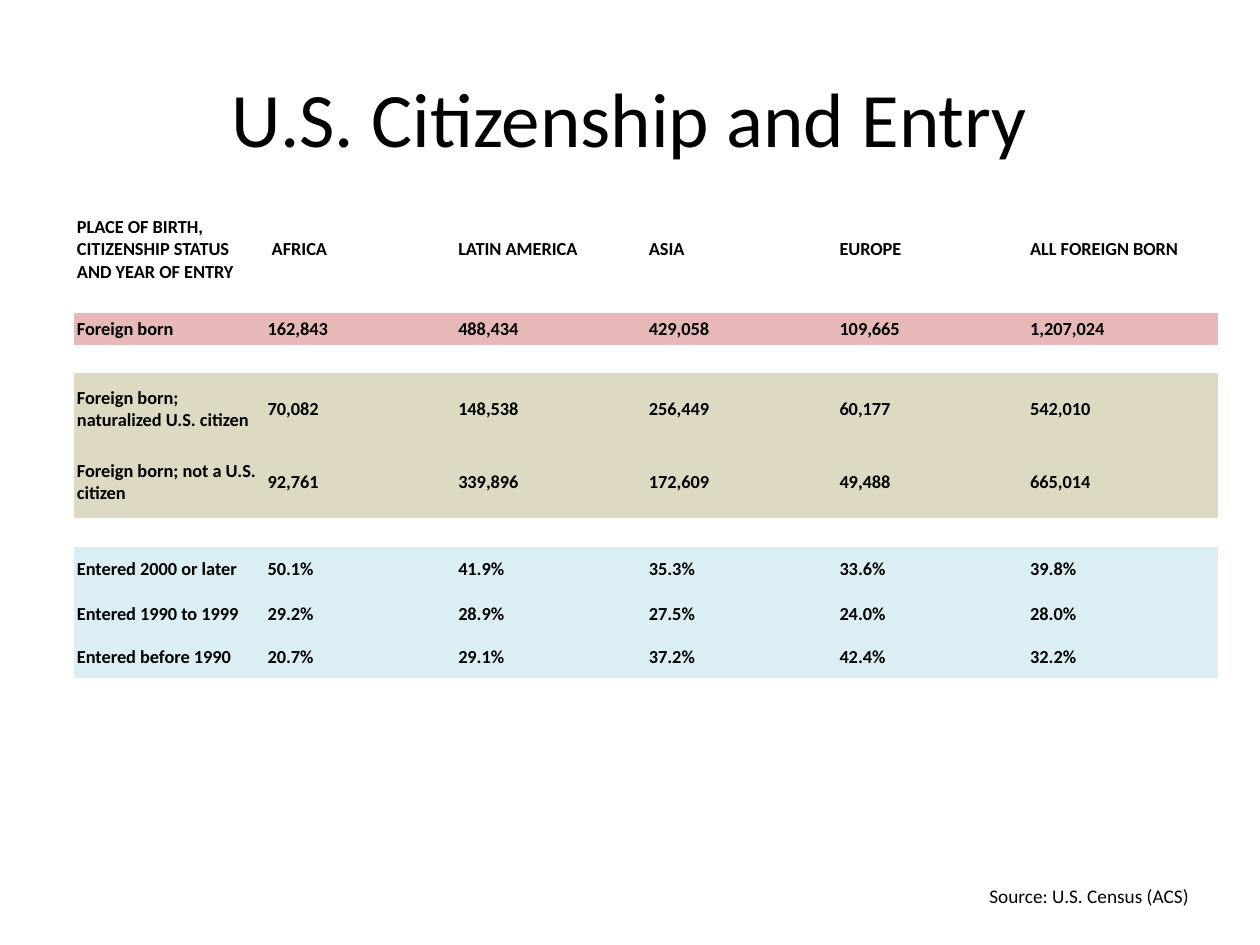
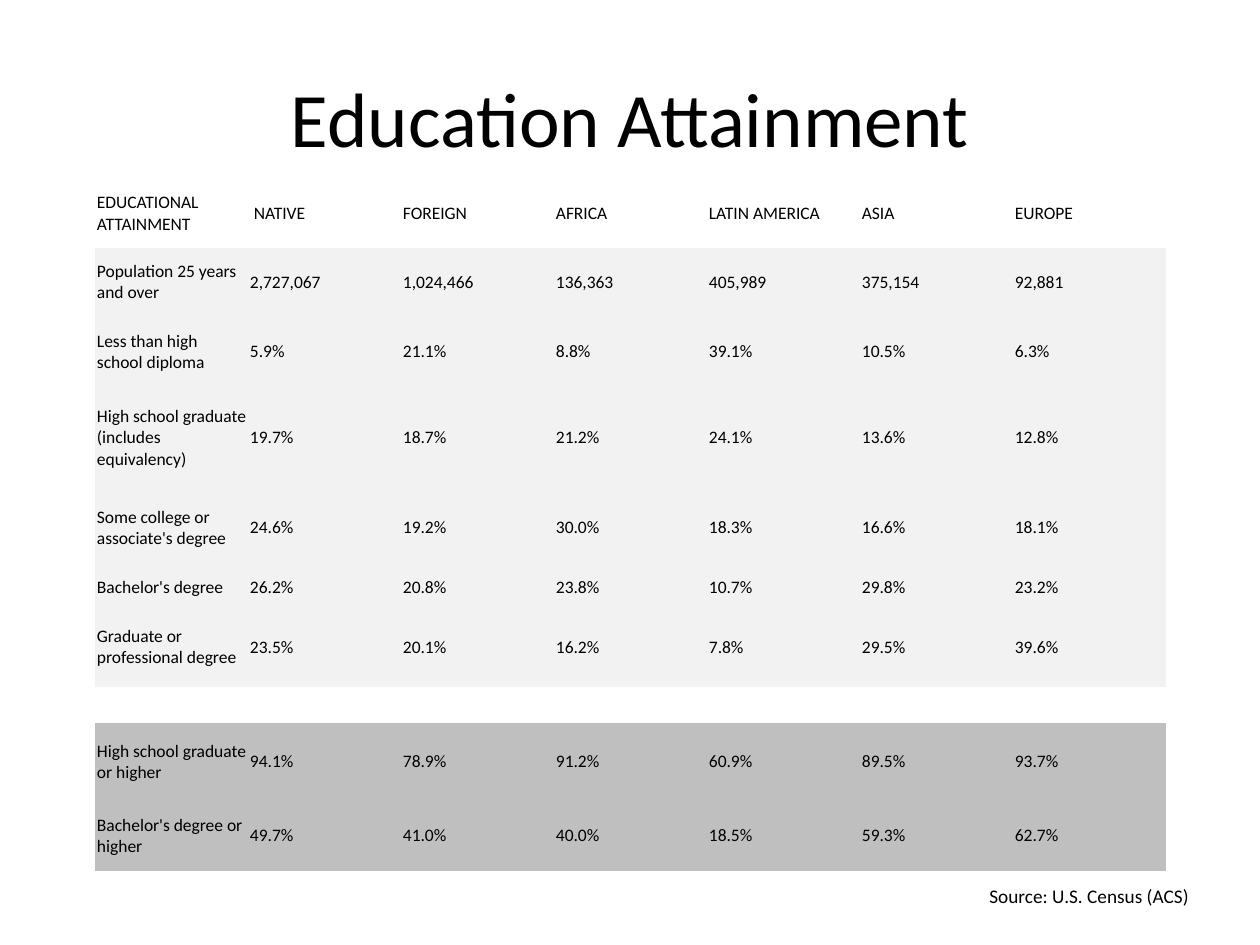
"""Build two census table slides: citizenship and entry, and education attainment."""
from pptx import Presentation, util as u
from pptx.dml.color import RGBColor
from pptx.enum import text
from pptx.oxml.ns import qn

PX = 914400 / 126
FONT, INK = "Calibri", "000000"
PINK, SAND, SKY, PALE, GREY = "E6B9B8", "DDD9C3", "DBEEF4", "F2F2F2", "BFBFBF"
NO_STYLE_NO_GRID = "{2D5ABB26-0587-4C30-8999-92F81FD0307C}"
SOURCE = "Source: U.S. Census (ACS)"
TITLE_BOX = (63, 38, 1134, 157)
SOURCE_BOX = (977, 878, 262, 37)

# Each row: height, band colour, cells; a row without cells is a gap.
SLIDES = [
    {
        "title": "U.S. Citizenship and Entry",
        "box": (74, 186, 1144), "inset": 3, "size": 10.5, "bold": True,
        "rows": [
            (127, None, ["PLACE OF BIRTH, CITIZENSHIP STATUS AND YEAR OF ENTRY", " AFRICA",
                         "LATIN AMERICA", "ASIA", "EUROPE", "ALL FOREIGN BORN"]),
            (32, PINK, ["Foreign born", "162,843", "488,434", "429,058", "109,665", "1,207,024"]),
            (28, None, []),
            (73, SAND, ["Foreign born; naturalized U.S. citizen", "70,082", "148,538",
                        "256,449", "60,177", "542,010"]),
            (72, SAND, ["Foreign born; not a U.S. citizen", "92,761", "339,896",
                        "172,609", "49,488", "665,014"]),
            (29, None, []),
            (45, SKY, ["Entered 2000 or later", "50.1%", "41.9%", "35.3%", "33.6%", "39.8%"]),
            (45, SKY, ["Entered 1990 to 1999", "29.2%", "28.9%", "27.5%", "24.0%", "28.0%"]),
            (41, SKY, ["Entered before 1990", "20.7%", "29.1%", "37.2%", "42.4%", "32.2%"]),
        ],
    },
    {
        "title": "Education Attainment",
        "box": (95, 179, 1071), "inset": 2, "size": 10, "bold": False,
        "rows": [
            (69, None, ["EDUCATIONAL ATTAINMENT", " NATIVE", "FOREIGN", "AFRICA ",
                        "LATIN AMERICA", "ASIA", "EUROPE"]),
            (69, PALE, ["Population 25 years and over", "2,727,067", "1,024,466", "136,363",
                        "405,989", "375,154", "92,881"]),
            (70, PALE, ["Less than high school diploma", "5.9%", "21.1%", "8.8%",
                        "39.1%", "10.5%", "6.3%"]),
            (102, PALE, ["High school graduate (includes equivalency)", "19.7%", "18.7%",
                         "21.2%", "24.1%", "13.6%", "12.8%"]),
            (78, PALE, ["Some college or associate's degree", "24.6%", "19.2%", "30.0%",
                        "18.3%", "16.6%", "18.1%"]),
            (41, PALE, ["Bachelor's degree", "26.2%", "20.8%", "23.8%", "10.7%", "29.8%", "23.2%"]),
            (79, PALE, ["Graduate or professional degree", "23.5%", "20.1%", "16.2%",
                        "7.8%", "29.5%", "39.6%"]),
            (36, None, []),
            (78, GREY, ["High school graduate or higher", "94.1%", "78.9%", "91.2%",
                        "60.9%", "89.5%", "93.7%"]),
            (70, GREY, ["Bachelor's degree or higher", "49.7%", "41.0%", "40.0%",
                        "18.5%", "59.3%", "62.7%"]),
        ],
    },
]


def px(length):
    return u.Emu(round(length * PX))


def colour(code):
    return RGBColor.from_string(code)


def write(paragraph, words, size, bold=False):
    run = paragraph.add_run()
    run.text = words
    for key, value in {"name": FONT, "size": u.Pt(size), "bold": bold}.items():
        setattr(run.font, key, value)
    run.font.color.rgb = colour(INK)


def add_label(slide, box, words, size, **frame_format):
    frame = slide.shapes.add_textbox(*map(px, box)).text_frame
    for key, value in {"word_wrap": True, **frame_format}.items():
        setattr(frame, key, value)
    write(frame.paragraphs[0], words, size)
    return frame.paragraphs[0]


def fill_cell(cell, words, band, content):
    side, edge = px(content["inset"]), px(1)
    cell_format = {"margin_left": side, "margin_right": side, "margin_top": edge,
                   "margin_bottom": edge, "vertical_anchor": text.MSO_ANCHOR.MIDDLE}
    for key, value in cell_format.items():
        setattr(cell, key, value)
    if band:
        cell.fill.solid()
        cell.fill.fore_color.rgb = colour(band)
    else:
        cell.fill.background()
    paragraph = cell.text_frame.paragraphs[0]
    if words:
        write(paragraph, words, content["size"], content["bold"])
    else:
        paragraph._p.get_or_add_endParaRPr().set("sz", "1000")


def add_census_table(slide, content):
    left, top, width = content["box"]
    rows = content["rows"]
    columns = len(rows[0][2])
    height = sum(row[0] for row in rows)
    frame = slide.shapes.add_table(len(rows), columns, *map(px, (left, top, width, height)))
    table = frame.table
    table.first_row = table.horz_banding = False
    next(table._tbl.iter(qn("a:tableStyleId"))).text = NO_STYLE_NO_GRID
    for column in table.columns:
        column.width = px(width / columns)
    for row, (row_height, band, cells) in zip(table.rows, rows):
        row.height = px(row_height)
        for cell, words in zip(row.cells, cells or [""] * columns):
            fill_cell(cell, words, band, content)


def main():
    deck = Presentation()
    deck.slide_width, deck.slide_height = px(1260), px(945)
    for content in SLIDES:
        slide = deck.slides.add_slide(deck.slide_layouts[6])
        title = add_label(slide, TITLE_BOX, content["title"], 44,
                          vertical_anchor=text.MSO_ANCHOR.MIDDLE)
        title.alignment = text.PP_ALIGN.CENTER
        add_census_table(slide, content)
        add_label(slide, SOURCE_BOX, SOURCE, 11,
                  auto_size=text.MSO_AUTO_SIZE.SHAPE_TO_FIT_TEXT)
    deck.save("out.pptx")


if __name__ == "__main__":
    main()
